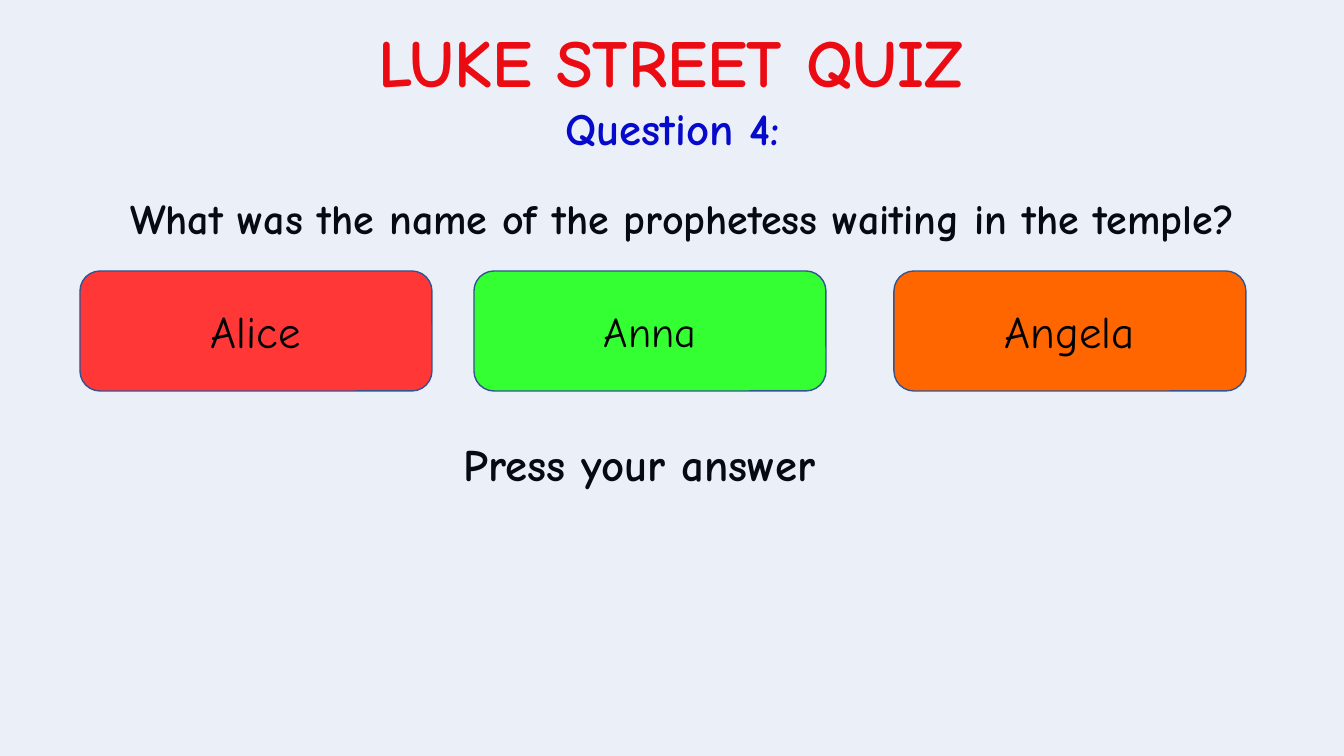
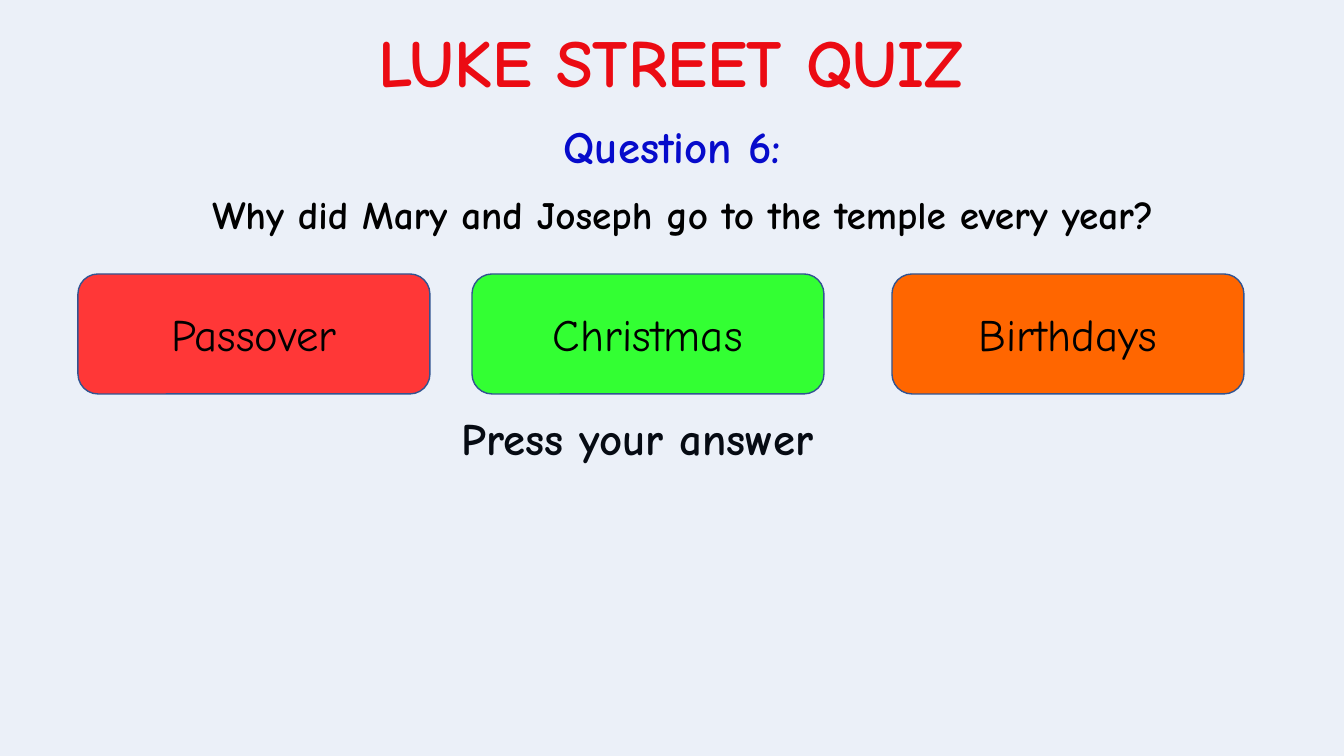
"""Build two quiz slides with three coloured answer buttons each."""
from lxml import etree
from pptx import Presentation
from pptx.dml.color import RGBColor
from pptx.enum.shapes import MSO_SHAPE
from pptx.enum.text import MSO_ANCHOR, MSO_AUTO_SIZE, PP_ALIGN
from pptx.oxml.ns import qn
from pptx.util import Emu, Pt

RECTANGLE, ROUNDED = MSO_SHAPE.RECTANGLE, MSO_SHAPE.ROUNDED_RECTANGLE
TOP, MIDDLE = MSO_ANCHOR.TOP, MSO_ANCHOR.MIDDLE
LEFT, CENTER = PP_ALIGN.LEFT, PP_ALIGN.CENTER
NO_AUTOFIT = MSO_AUTO_SIZE.NONE

WIDTH, HEIGHT = 1344, 756
EMU_PER_PX = 12192000 / WIDTH
FONT = "Comic Neue"
BLACK, RED, BLUE = "000000", "FF0000", "0000CC"
TINT, OUTLINE = "4472C4", "325491"
TINT_OPACITY = 10
BUTTON_OFFSETS = (0, 394, 814)
BUTTON_FILLS = ("FF3737", "33FF33", "FF6600")
BUTTON_WIDTH, BUTTON_HEIGHT = 352, 120

QUIZ = (
    {
        "number": "Question 4:", "number_top": 96,
        "question": "What was the name of the prophetess waiting in the temple?",
        "question_box": (22, 182, 1321, 120), "question_size": 30,
        "question_spacing": 40, "question_in_front": False,
        "answers": (("Alice", 32), ("Anna", 30), ("Angela", 32)),
        "buttons_at": (80, 271), "prompt_at": (454, 438),
    },
    {
        "number": "Question 6:", "number_top": 114,
        "question": "Why did Mary and Joseph go to the temple every year?",
        "question_box": (78, 182, 1210, 120), "question_size": 28,
        "question_spacing": 36, "question_in_front": True,
        "answers": (("Passover", 32), ("Christmas", 32), ("Birthdays", 32)),
        "buttons_at": (78, 274), "prompt_at": (452, 412),
    },
)


def px(length):
    """Turn pixels into EMU."""
    return Emu(round(length * EMU_PER_PX))


def color(value):
    """Turn a hex string into a colour."""
    return RGBColor.from_string(value)


def write(box, text, size=32, ink=BLACK, bold=True, align=CENTER, anchor=TOP,
          wrap=True, line_spacing=None, space_before=0):
    """Put one formatted paragraph into a shape."""
    frame = box.text_frame
    frame.auto_size = NO_AUTOFIT
    frame.word_wrap = wrap
    frame.vertical_anchor = anchor
    para = frame.paragraphs[0]
    para.alignment = align
    para.space_before = Pt(space_before)
    if line_spacing is not None:
        para.line_spacing = line_spacing
    span = para.add_run()
    span.text = text
    span.font.name = FONT
    span.font.size = Pt(size)
    span.font.bold = bold
    span.font.color.rgb = color(ink)


def add_title(page):
    """Fill and place the title shared by all pages."""
    title = page.shapes.title
    title.left, title.top, title.width, title.height = map(px, (314, 15, 714, 92))
    write(title, "LUKE STREET QUIZ", size=48, ink=RED, wrap=False)


def add_text(page, bounds, text, **style):
    """Add a text box."""
    write(page.shapes.add_textbox(*map(px, bounds)), text, **style)


def add_panel(page, kind, bounds, fill):
    """Add a flat filled shape."""
    panel = page.shapes.add_shape(kind, *map(px, bounds))
    panel.shadow.inherit = False
    panel.fill.solid()
    panel.fill.fore_color.rgb = color(fill)
    return panel


def add_tint(page):
    """Cover the page with a translucent blue."""
    tint = add_panel(page, RECTANGLE, (0, 0, WIDTH, HEIGHT), TINT)
    tint.line.fill.background()
    value = tint.fill._xPr.find(qn("a:solidFill")).find(qn("a:srgbClr"))
    etree.SubElement(value, qn("a:alpha"), val=str(TINT_OPACITY * 1000))


def add_buttons(page, left, top, answers):
    """Add the row of answer buttons."""
    for offset, fill, (answer, size) in zip(BUTTON_OFFSETS, BUTTON_FILLS, answers):
        bounds = (left + offset, top, BUTTON_WIDTH, BUTTON_HEIGHT)
        button = add_panel(page, ROUNDED, bounds, fill)
        button.line.color.rgb = color(OUTLINE)
        button.line.width = Pt(1)
        write(button, answer, size=size, bold=False, anchor=MIDDLE)


def add_question(page, item):
    """Add the question sentence."""
    add_text(page, item["question_box"], item["question"],
             size=item["question_size"], space_before=10,
             line_spacing=Pt(item["question_spacing"]))


def add_page(deck, item):
    """Add one quiz page."""
    page = deck.slides.add_slide(deck.slide_layouts[5])
    add_title(page)
    if not item["question_in_front"]:
        add_question(page, item)
    add_text(page, (*item["prompt_at"], 678, 73), "Press your answer",
             align=LEFT, line_spacing=0.9, space_before=7.5)
    add_text(page, (450, item["number_top"], 445, 65), item["number"], ink=BLUE)
    add_tint(page)
    add_buttons(page, *item["buttons_at"], item["answers"])
    if item["question_in_front"]:
        add_question(page, item)


def main():
    """Build and save the deck."""
    deck = Presentation()
    deck.slide_width, deck.slide_height = px(WIDTH), px(HEIGHT)
    for item in QUIZ:
        add_page(deck, item)
    deck.save("out.pptx")


if __name__ == "__main__":
    main()
